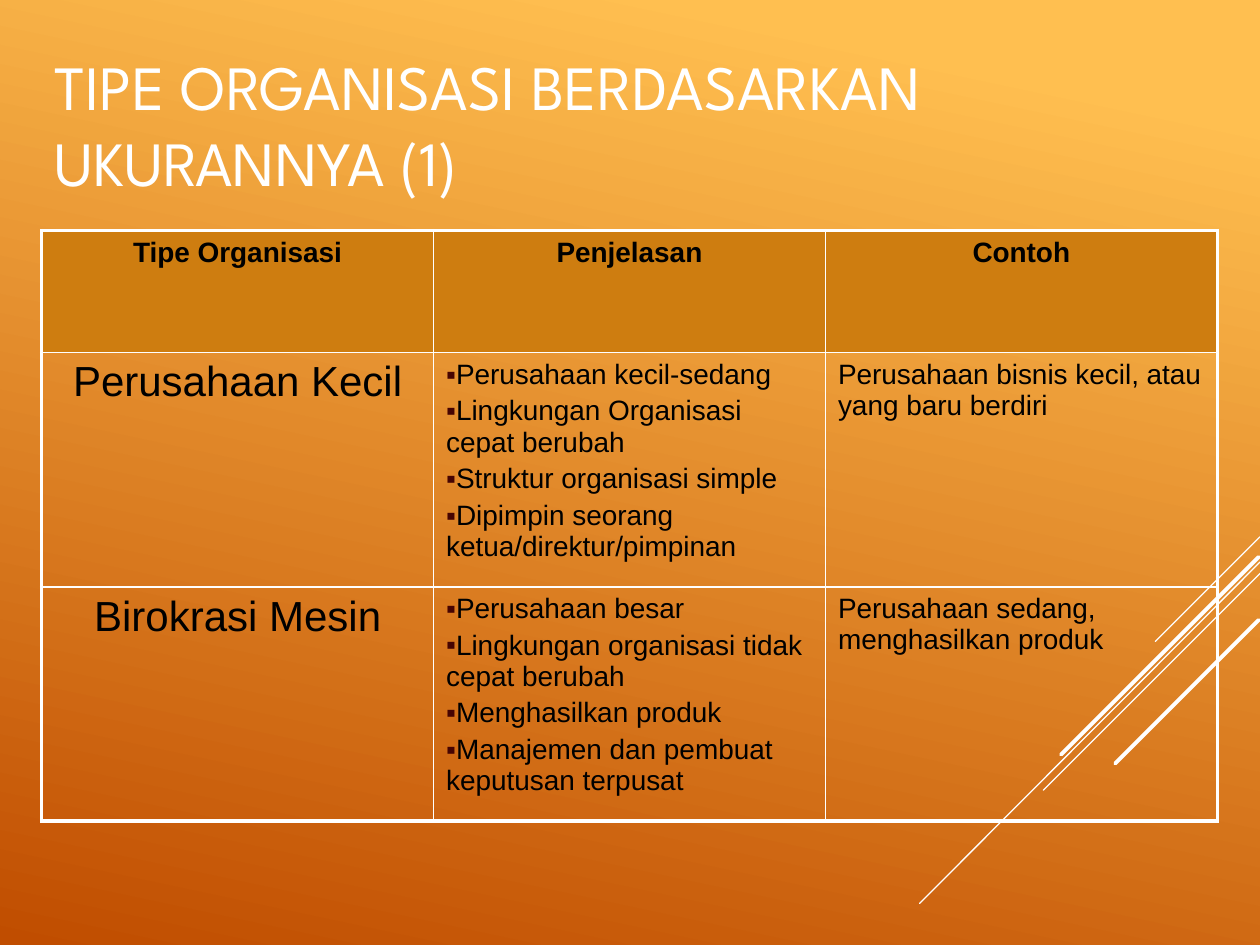
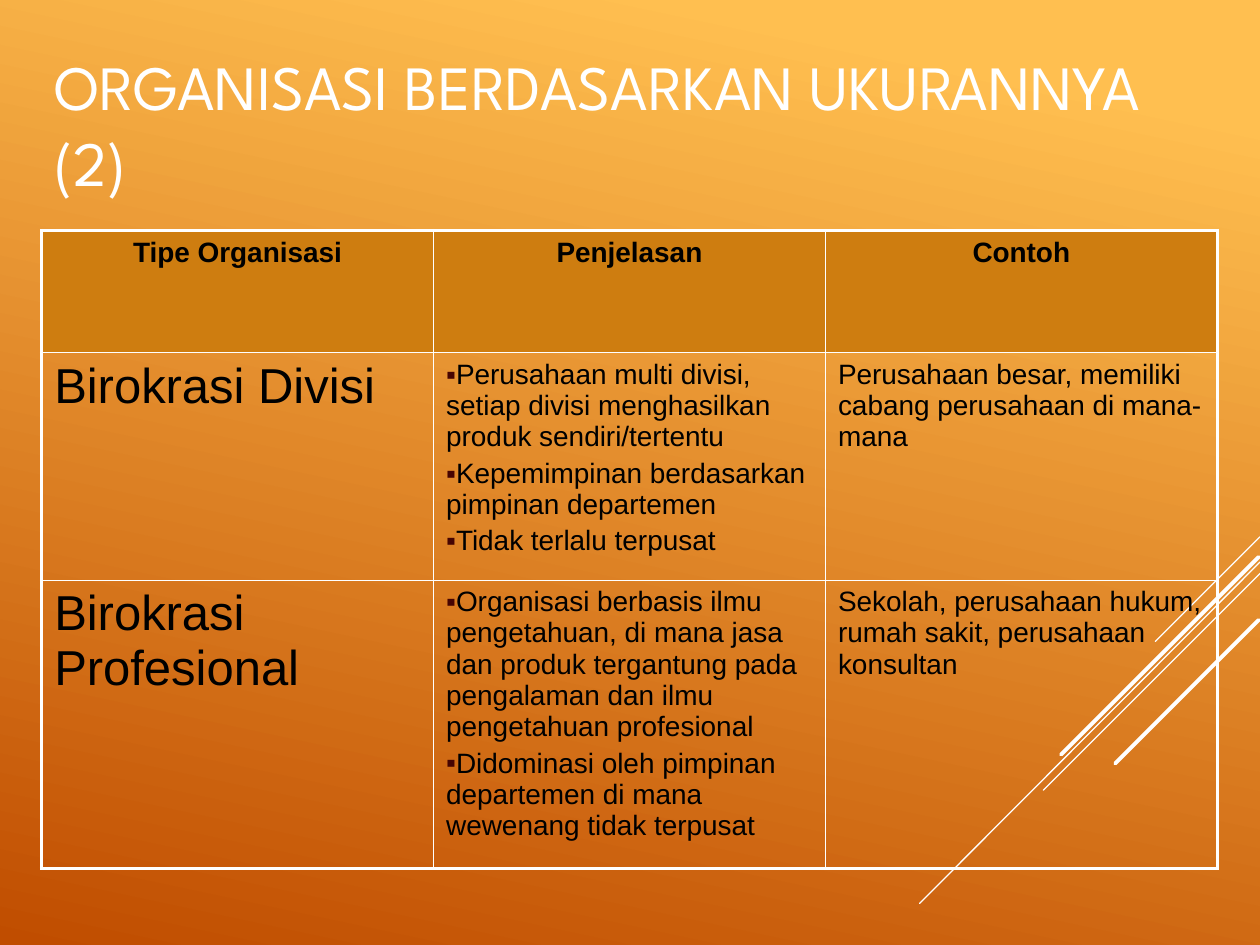
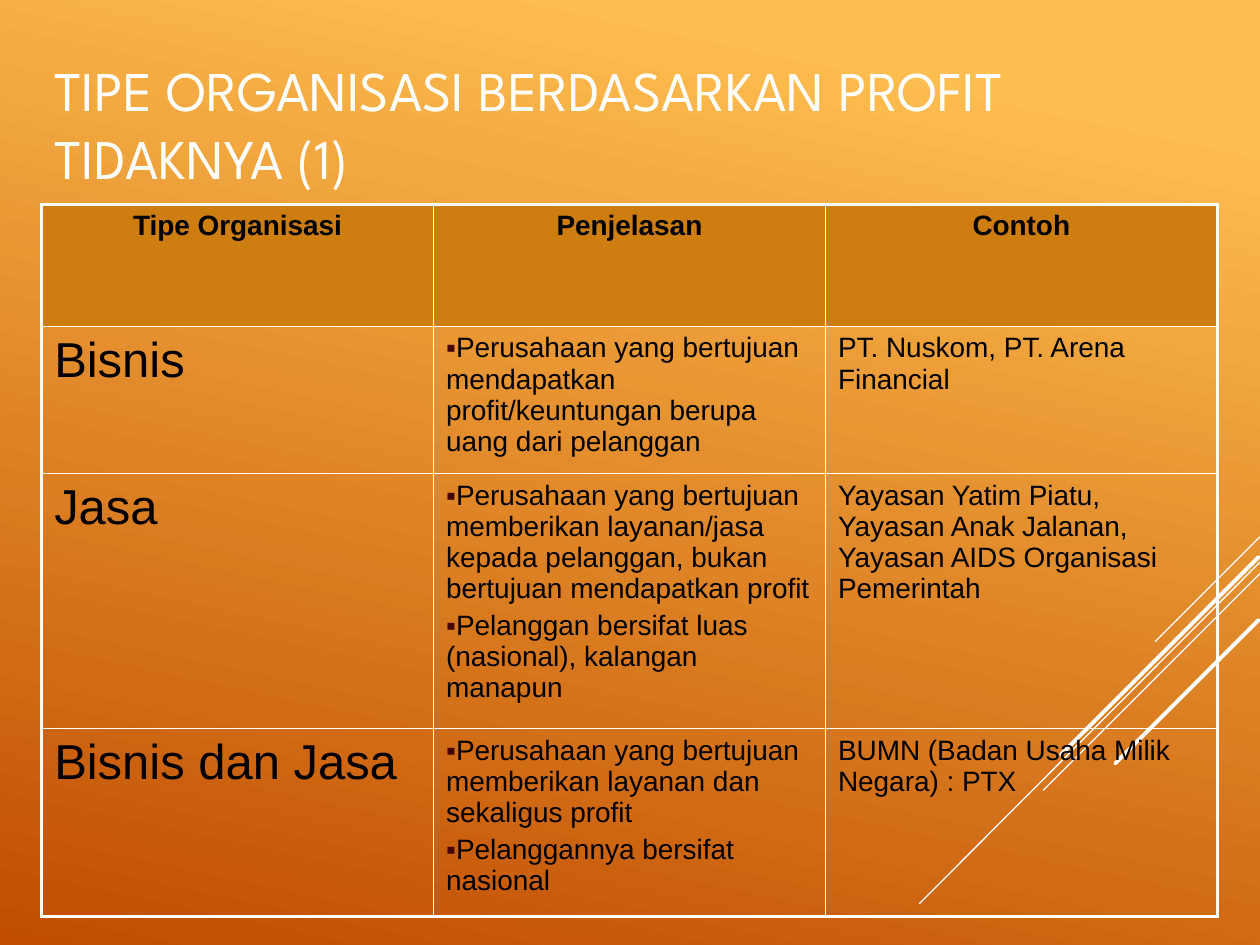
from lxml import etree
from pptx import Presentation
from pptx.dml.color import RGBColor
from pptx.enum.shapes import MSO_CONNECTOR as Connector
from pptx.enum.text import MSO_ANCHOR as Anchor, MSO_AUTO_SIZE as AutoSize, PP_ALIGN as Align
from pptx.oxml.ns import qn
from pptx.util import Cm, Pt

COLORS = {
    "light": "FFBF50",
    "dark": "C04D00",
    "white": "FFFFFF",
    "black": "000000",
    "header": "CE7D10",
    "bullet": "460402",
}
TITLE_FONT, BODY_FONT = "League Spartan", "Arial"
BODY_SIZE = 16
LEFT, COLUMN_WIDTH, HEADER_HEIGHT = 0.84, 7.9, 2.46
OUTER_BORDER, INNER_BORDER = 2.25, 1
HEADINGS = ("Tipe Organisasi", "Penjelasan", "Contoh")

# Diagonal lines: x1, y1, x2, y2 in cm, width in points
DIAGONALS = [
    (25.4, 10.82, 23.29, 12.93, 0.75),
    (25.4, 11.33, 18.54, 18.21, 0.75),
    (25.4, 11.56, 21.03, 15.93, 0.75),
    (25.37, 11.23, 21.39, 15.21, 2.25),
    (25.37, 12.5, 22.48, 15.39, 2.25),
]

# Each row: height in cm, type, explanations, example
SLIDES = [
    {
        "title": "TIPE ORGANISASI BERDASARKAN UKURANNYA (1)",
        "title_size": 36, "top": 4.65, "type_size": 24, "type_align": Align.CENTER,
        "rows": [
            (4.72, "Perusahaan Kecil",
             ["Perusahaan kecil-sedang", "Lingkungan Organisasi cepat berubah",
              "Struktur organisasi simple", "Dipimpin seorang ketua/direktur/pimpinan"],
             "Perusahaan bisnis kecil, atau yang baru berdiri"),
            (4.72, "Birokrasi Mesin",
             ["Perusahaan besar", "Lingkungan organisasi tidak cepat berubah",
              "Menghasilkan produk", "Manajemen dan pembuat keputusan terpusat"],
             "Perusahaan sedang, menghasilkan produk"),
        ],
    },
    {
        "title": "ORGANISASI BERDASARKAN UKURANNYA (2)",
        "title_size": 36, "top": 4.65, "type_size": 28, "type_align": Align.LEFT,
        "rows": [
            (4.59, "Birokrasi Divisi",
             ["Perusahaan multi divisi, setiap divisi menghasilkan produk sendiri/tertentu",
              "Kepemimpinan berdasarkan pimpinan departemen", "Tidak terlalu terpusat"],
             "Perusahaan besar, memiliki cabang perusahaan di mana-mana"),
            (5.81, "Birokrasi Profesional",
             ["Organisasi berbasis ilmu pengetahuan, di mana jasa dan produk tergantung "
              "pada pengalaman dan ilmu pengetahuan profesional",
              "Didominasi oleh pimpinan departemen di mana wewenang tidak terpusat"],
             "Sekolah, perusahaan hukum, rumah sakit, perusahaan konsultan"),
        ],
    },
    {
        "title": "TIPE ORGANISASI BERDASARKAN PROFIT TIDAKNYA (1)",
        "title_size": 32, "top": 4.12, "type_size": 28, "type_align": Align.LEFT,
        "rows": [
            (2.97, "Bisnis",
             ["Perusahaan yang bertujuan mendapatkan profit/keuntungan berupa uang dari pelanggan"],
             "PT. Nuskom, PT. Arena Financial"),
            (5.14, "Jasa",
             ["Perusahaan yang bertujuan memberikan layanan/jasa kepada pelanggan, "
              "bukan bertujuan mendapatkan profit",
              "Pelanggan bersifat luas (nasional), kalangan manapun"],
             "Yayasan Yatim Piatu, Yayasan Anak Jalanan, Yayasan AIDS Organisasi Pemerintah"),
            (3.78, "Bisnis dan Jasa",
             ["Perusahaan yang bertujuan memberikan layanan dan sekaligus profit",
              "Pelanggannya bersifat nasional"],
             "BUMN (Badan Usaha Milik Negara) : PTX"),
        ],
    },
]


def rgb(name):
    return RGBColor.from_string(COLORS[name])


def add_element(parent, tag, **attributes):
    return etree.SubElement(parent, qn(tag), attributes)


def format_runs(paragraph, font_name, size, color, bold=False):
    for run in paragraph.runs:
        run.font.name = font_name
        run.font.size = Pt(size)
        run.font.bold = bold
        run.font.color.rgb = rgb(color)


def set_background(master):
    fill = master.background.fill
    fill.gradient()
    fill.gradient_angle = 360 - 102
    for stop, (position, color) in zip(fill.gradient_stops, [(0.1, "light"), (1, "dark")]):
        stop.position = position
        stop.color.rgb = rgb(color)


def add_diagonals(slide):
    for x1, y1, x2, y2, width in DIAGONALS:
        connector = slide.shapes.add_connector(
            Connector.STRAIGHT, Cm(x1), Cm(y1), Cm(x2), Cm(y2))
        connector.line.color.rgb = rgb("white")
        connector.line.width = Pt(width)
        properties = connector.element.spPr
        properties.find(qn("a:ln")).set("cap", "rnd")
        add_element(properties, "a:effectLst")


def set_title(slide, text, size):
    title = slide.shapes.title
    title.left, title.top, title.width, title.height = Cm(LEFT), Cm(0.64), Cm(23.65), Cm(3.68)
    text_frame = title.text_frame
    text_frame.text = text
    text_frame.auto_size = AutoSize.NONE
    text_frame.vertical_anchor = Anchor.MIDDLE
    paragraph = text_frame.paragraphs[0]
    paragraph.alignment = Align.LEFT
    format_runs(paragraph, TITLE_FONT, size, "white")


def style_paragraph(paragraph, bulleted):
    """Space of 20 % before, and a small square bullet where wanted."""
    properties = paragraph._p.get_or_add_pPr()
    add_element(add_element(properties, "a:spcBef"), "a:spcPct", val="20000")
    if bulleted:
        properties.set("marL", "0")
        properties.set("indent", "0")
        add_element(add_element(properties, "a:buClr"), "a:srgbClr", val=COLORS["bullet"])
        add_element(properties, "a:buFont", typeface=BODY_FONT)
        add_element(properties, "a:buChar", char="▪")


def fill_cell(cell, lines, size=BODY_SIZE, align=Align.LEFT, bold=False, bulleted=False):
    cell.text_frame.text = "\n".join(lines)
    for paragraph in cell.text_frame.paragraphs:
        paragraph.alignment = align
        style_paragraph(paragraph, bulleted)
        format_runs(paragraph, BODY_FONT, size, "black", bold)


def set_borders(cell, outer_sides):
    properties = cell._tc.get_or_add_tcPr()
    for index, side in enumerate("LRTB"):
        width = OUTER_BORDER if side in outer_sides else INNER_BORDER
        line = etree.Element(qn(f"a:ln{side}"), w=str(Pt(width)))
        add_element(add_element(line, "a:solidFill"), "a:srgbClr", val=COLORS["white"])
        properties.insert(index, line)


def style_cells(table):
    last_row, last_column = len(table.rows) - 1, len(table.columns) - 1
    for row in range(last_row + 1):
        for column in range(last_column + 1):
            cell = table.cell(row, column)
            if row == 0:
                cell.fill.solid()
                cell.fill.fore_color.rgb = rgb("header")
            else:
                cell.fill.background()
            edges = {"L": column == 0, "R": column == last_column,
                     "T": row == 0, "B": row == last_row}
            set_borders(cell, [side for side, is_outer in edges.items() if is_outer])


def add_organisation_table(slide, content):
    heights = [HEADER_HEIGHT] + [row[0] for row in content["rows"]]
    table = slide.shapes.add_table(
        len(heights), len(HEADINGS), Cm(LEFT), Cm(content["top"]),
        Cm(COLUMN_WIDTH * len(HEADINGS)), Cm(sum(heights))).table
    table.first_row = table.horz_banding = False
    for column in table.columns:
        column.width = Cm(COLUMN_WIDTH)
    for row, height in zip(table.rows, heights):
        row.height = Cm(height)

    # Header row
    for column, heading in enumerate(HEADINGS):
        fill_cell(table.cell(0, column), [heading], align=Align.CENTER, bold=True)

    # Organisation rows
    for row, (_, kind, explanations, example) in enumerate(content["rows"], start=1):
        fill_cell(table.cell(row, 0), [kind], content["type_size"], content["type_align"])
        fill_cell(table.cell(row, 1), explanations, bulleted=True)
        fill_cell(table.cell(row, 2), [example])
    style_cells(table)


def main():
    presentation = Presentation()
    presentation.slide_width, presentation.slide_height = Cm(25.4), Cm(19.05)
    set_background(presentation.slide_master)
    title_only = presentation.slide_layouts[5]
    for content in SLIDES:
        slide = presentation.slides.add_slide(title_only)
        add_diagonals(slide)
        set_title(slide, content["title"], content["title_size"])
        add_organisation_table(slide, content)
    presentation.save("out.pptx")


if __name__ == "__main__":
    main()
